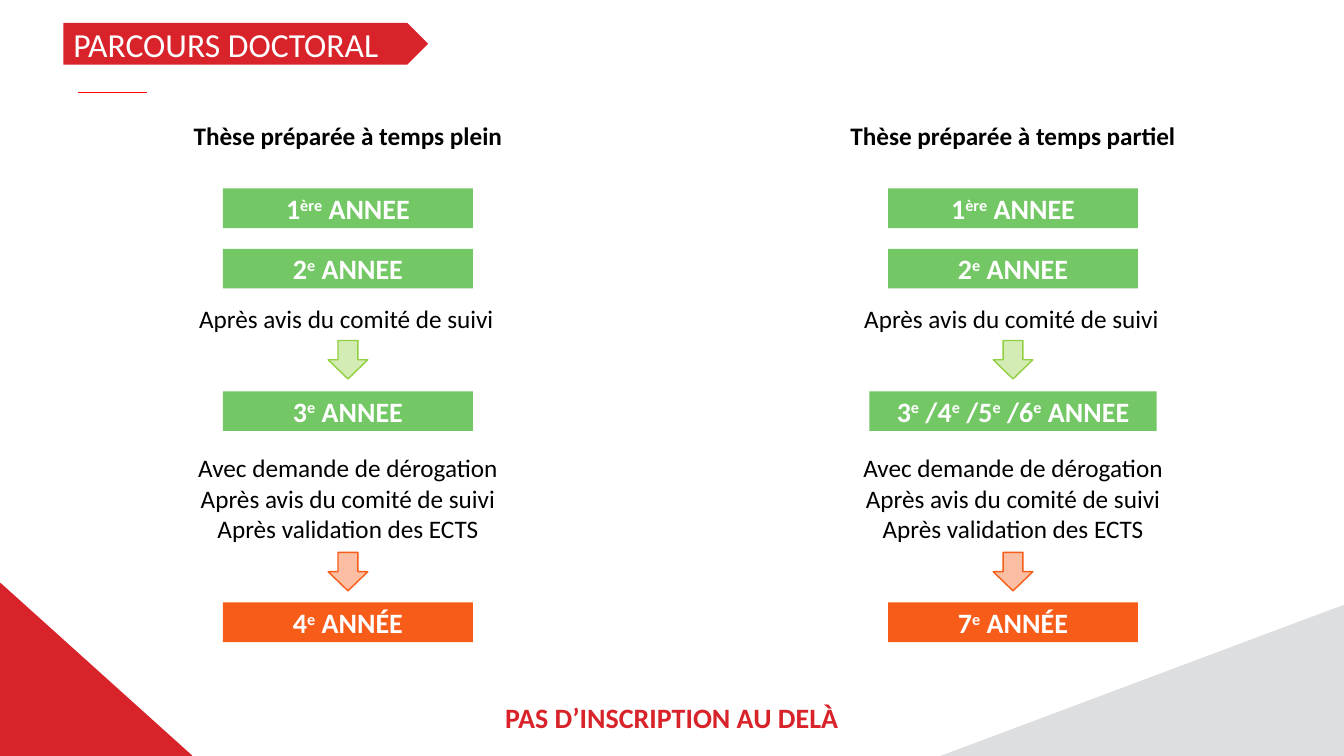
"""Build the slide on the two doctoral tracks, full time and part time."""
from dataclasses import dataclass

from pptx import Presentation
from pptx.dml.color import RGBColor
from pptx.enum.shapes import MSO_CONNECTOR as Link, MSO_SHAPE as Kind
from pptx.enum.text import MSO_ANCHOR as Anchor, PP_ALIGN as Align
from pptx.oxml.ns import qn
from pptx.util import Cm, Pt

RED, GREEN, ORANGE = "D8232A", "73C764", "F75C19"
WHITE, BLACK, GREY = "FFFFFF", "000000", "DCDEE0"


@dataclass
class Box:
    left: float
    top: float
    width: float
    height: float

    def sides(self) -> tuple:
        return tuple(map(Cm, (self.left, self.top, self.width, self.height)))


@dataclass
class Style:
    size: int
    color: str
    bold: bool = False
    align: Align = Align.CENTER


@dataclass
class Track:
    mid: float
    title: str
    third: str
    wide: float
    last: str


@dataclass
class Arrow:
    top: float
    fill: str
    line: str


YEAR = Style(20, WHITE, True)
HEAD = Style(18, BLACK, True)
NOTE = Style(18, BLACK)
LEFT = Style(18, BLACK, align=Align.LEFT)
ADVICE = "Après avis du comité de suivi"
TERMS = f"Avec demande de dérogation\n{ADVICE}\nAprès validation des ECTS"
TRACKS = [
    Track(8.77, "Thèse préparée à temps plein", "3^e^ ANNEE", 6.3, "4^e^ ANNÉE"),
    Track(25.53, "Thèse préparée à temps partiel",
          "3^e^ /4^e^ /5^e^ /6^e^ ANNEE", 7.24, "7^e^ ANNÉE"),
]
ARROWS = [Arrow(8.58, "D3ECB3", "90CF40"), Arrow(13.92, "FCBEA3", ORANGE)]


def paint(part, color: str) -> None:
    part.rgb = RGBColor.from_string(color)


def write(shape, text: str, style: Style) -> None:
    """Write lines of text, raising the parts held between carets."""
    frame = shape.text_frame
    frame.word_wrap = True
    frame.text = text
    for para in frame.paragraphs:
        first, *rest = para.text.split("^")
        para.text = first
        para.alignment = style.align
        for piece in rest:
            para.add_run().text = piece
        for rank, run in enumerate(para.runs):
            font = run.font
            font.name, font.size, font.bold = "Calibri", Pt(style.size), style.bold
            paint(font.color, style.color)
            if rank % 2:
                run._r.get_or_add_rPr().set("baseline", "30000")


def draw(slide, kind: Kind, box: Box, fill: str, line: str = ""):
    """Draw a filled shape, with an outline if a line colour is given."""
    shape = slide.shapes.add_shape(kind, *box.sides())
    shape.shadow.inherit = False
    shape.fill.solid()
    paint(shape.fill.fore_color, fill)
    if line:
        paint(shape.line.color, line)
        shape.line.width = Pt(1)
    else:
        shape.line.fill.background()
    return shape


def label(slide, box: Box, text: str, style: Style) -> None:
    """Place plain text on the slide."""
    write(slide.shapes.add_textbox(*box.sides()), text, style)


def band(slide, kind: Kind, box: Box, fill: str, text: str, style: Style) -> None:
    """Draw a coloured shape with text in its middle."""
    shape = draw(slide, kind, box, fill)
    write(shape, text, style)
    shape.text_frame.vertical_anchor = Anchor.MIDDLE


def decor(slide) -> None:
    """Draw the corners, the title and its short rule."""
    draw(slide, Kind.RIGHT_TRIANGLE, Box(0, 14.7, 4.83, 4.35), RED, RED)
    corner = draw(slide, Kind.RIGHT_TRIANGLE, Box(23.7, 15.24, 10.17, 3.81), GREY)
    corner._element.spPr.xfrm.set("flipH", "1")
    band(slide, Kind.PENTAGON, Box(1.6, 0.58, 9.19, 1.05), RED,
         "PARCOURS DOCTORAL", Style(24, WHITE, align=Align.LEFT))
    rule = slide.shapes.add_connector(
        Link.STRAIGHT, Cm(1.96), Cm(2.33), Cm(3.71), Cm(2.33))
    paint(rule.line.color, "FF0000")
    rule.line.width = Pt(0.5)
    props = rule._element.spPr
    props.append(props.makeelement(qn("a:effectLst"), {}))


def column(slide, track: Track) -> None:
    """Draw one track from its heading down to its last year."""
    def place(top: float, width: float, height: float) -> Box:
        return Box(track.mid - width / 2, top, width, height)

    years = [
        (4.75, 6.3, GREEN, "1^ère^ ANNEE"),
        (6.27, 6.3, GREEN, "2^e^ ANNEE"),
        (9.86, track.wide, GREEN, track.third),
        (15.18, 6.3, ORANGE, track.last),
    ]
    for top, width, fill, text in years:
        band(slide, Kind.RECTANGLE, place(top, width, 1), fill, text, YEAR)
    for arrow in ARROWS:
        draw(slide, Kind.DOWN_ARROW, place(arrow.top, 1, 0.97), arrow.fill, arrow.line)
    label(slide, place(2.9, 10.13, 1.02), track.title, HEAD)
    label(slide, place(7.52, 8, 0.79), ADVICE, LEFT)
    label(slide, place(11.28, 9.47, 2.57), TERMS, NOTE)


def main() -> None:
    deck = Presentation()
    deck.slide_width, deck.slide_height = Cm(33.87), Cm(19.05)
    slide = deck.slides.add_slide(deck.slide_layouts[6])
    decor(slide)
    for track in TRACKS:
        column(slide, track)
    label(slide, Box(11.89, 17.53, 10.08, 1.12),
          "PAS D’INSCRIPTION AU DELÀ", Style(20, RED, True))
    deck.save("out.pptx")


if __name__ == "__main__":
    main()
